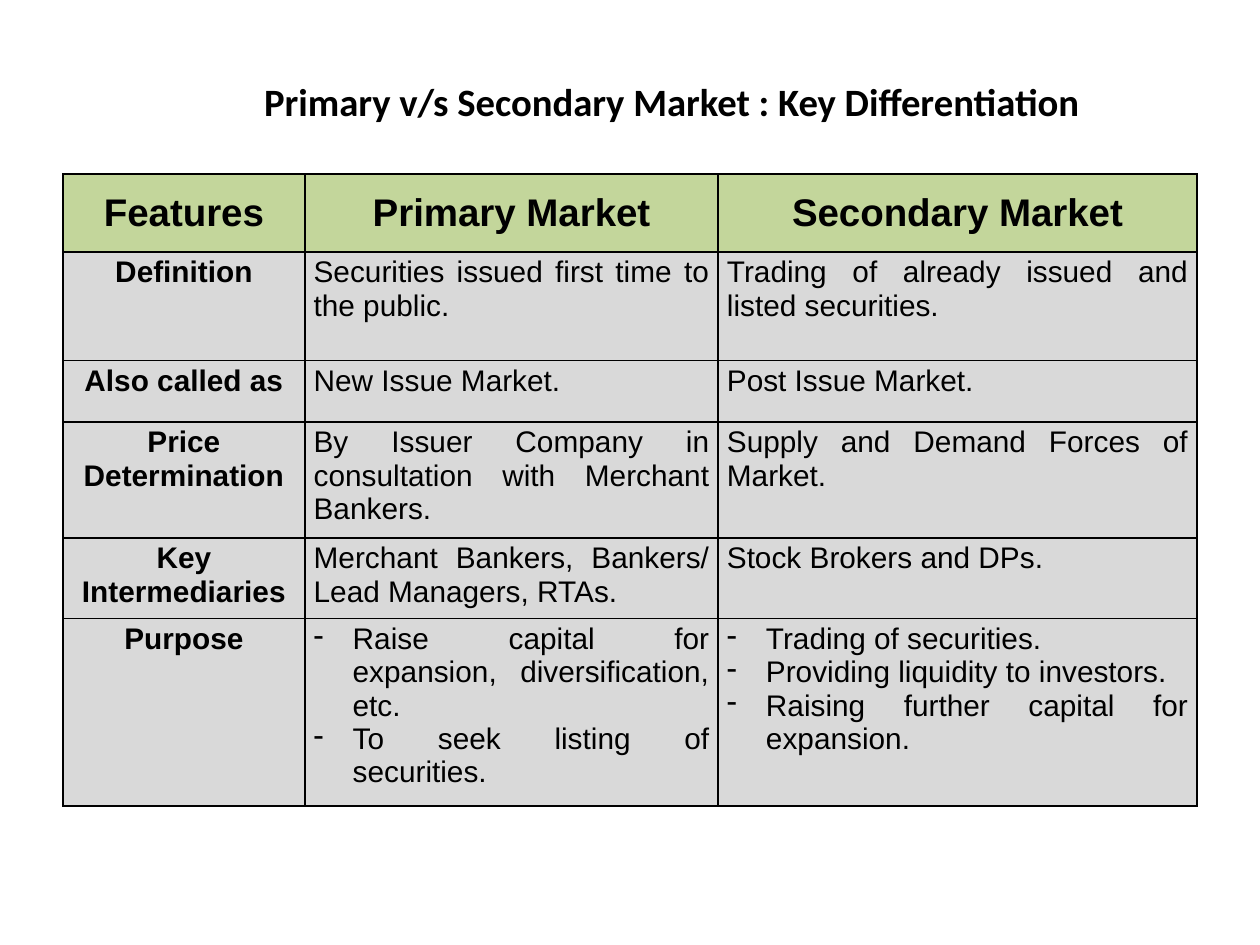
"""Build a slide that compares the primary and secondary markets in a table."""
import pptx
import pptx.dml.color
import pptx.enum.text
import pptx.oxml
import pptx.oxml.ns
import pptx.util

BLACK = pptx.dml.color.RGBColor(0x00, 0x00, 0x00)
GREEN = pptx.dml.color.RGBColor(0xC3, 0xD6, 0x9B)
GREY = pptx.dml.color.RGBColor(0xD9, 0xD9, 0xD9)
ALIGN = pptx.enum.text.PP_ALIGN
ANCHOR = pptx.enum.text.MSO_ANCHOR

HEADS = ["Features", "Primary Market", "Secondary Market"]
ROWS = [
    ("Definition", "Securities issued first time to the public.",
     "Trading of already issued and listed securities."),
    ("Also called as", "New Issue Market.", "Post Issue Market."),
    ("Price Determination",
     "By Issuer Company in consultation with Merchant Bankers.",
     "Supply and Demand Forces of Market."),
    ("Key Intermediaries", "Merchant Bankers, Bankers/ Lead Managers, RTAs.",
     "Stock Brokers and DPs."),
    ("Purpose",
     ["Raise capital for expansion, diversification, etc.",
      "To seek listing of securities."],
     ["Trading of securities.", "Providing liquidity to investors.",
      "Raising further capital for expansion."]),
]


class Deck:
    """Hold the style and the current slide, laid on a 100 by 75 grid."""

    def __init__(self):
        self.show = pptx.Presentation()
        self.show.slide_width = pptx.util.Inches(10)
        self.show.slide_height = pptx.util.Inches(7.5)
        self.slide = self.show.slides.add_slide(self.show.slide_layouts[5])

    def across(self, cols):
        """Turn grid columns into a length."""
        return round(self.show.slide_width * cols / 100)

    def down(self, rows):
        """Turn grid rows into a length."""
        return round(self.show.slide_height * rows / 75)

    def apply(self, item, form):
        """Set each format value on an item."""
        for name, value in form.items():
            setattr(item, name, value)

    def margins(self, side, top):
        """Give the inner margins as a format dict."""
        return {"margin_left": self.across(side), "margin_right": self.across(side),
                "margin_top": self.down(top), "margin_bottom": self.down(top)}

    def label(self, para, text, size, face, bold, align):
        """Put one styled run in a paragraph."""
        para.alignment = align
        run = para.add_run()
        run.text = text
        self.apply(run.font, {"size": pptx.util.Pt(size), "name": face, "bold": bold})
        run.font.color.rgb = BLACK

    def title(self, text, left, top, width, height):
        """Place and format the title."""
        shape = self.slide.shapes.title
        self.apply(shape, {"left": self.across(left), "top": self.down(top),
                           "width": self.across(width), "height": self.down(height)})
        frame = shape.text_frame
        self.apply(frame, {"word_wrap": True, "vertical_anchor": ANCHOR.BOTTOM,
                           "auto_size": pptx.enum.text.MSO_AUTO_SIZE.NONE,
                           **self.margins(0.5, 0.5)})
        para = frame.paragraphs[0]
        para.line_spacing = 0.9
        self.label(para, text, 22.1, "Calibri", True, ALIGN.CENTER)

    def bullet(self, para):
        """Give a paragraph a dash and a hanging indent."""
        props = para._p.get_or_add_pPr()
        props.set("marL", str(self.across(3.1)))
        props.set("indent", str(-self.across(3.1)))
        props.append(pptx.oxml.parse_xml(
            f'<a:buChar {pptx.oxml.ns.nsdecls("a")} char="-"/>'))

    def border(self, cell):
        """Draw a thin line on all four sides of a cell."""
        props = cell._tc.get_or_add_tcPr()
        for side in "LRTB":
            props.append(pptx.oxml.parse_xml(
                f'<a:ln{side} {pptx.oxml.ns.nsdecls("a")} w="{pptx.util.Pt(1)}">'
                f'<a:solidFill><a:srgbClr val="{BLACK}"/></a:solidFill></a:ln{side}>'))

    def cell(self, cell, text, head, first):
        """Fill one table cell with text or a dashed list."""
        self.border(cell)
        cell.fill.solid()
        cell.fill.fore_color.rgb = GREEN if head else GREY
        self.apply(cell, {"vertical_anchor": ANCHOR.MIDDLE if head else ANCHOR.TOP,
                          **self.margins(0.7, 0.3)})
        listed = isinstance(text, list)
        frame = cell.text_frame
        for i, line in enumerate(text if listed else [text]):
            para = frame.add_paragraph() if i else frame.paragraphs[0]
            self.label(para, line, 22 if head else 17, "Arial", head or first,
                       ALIGN.CENTER if head or first else ALIGN.JUSTIFY)
            if listed:
                self.bullet(para)

    def table(self, data, left, top, widths, heights):
        """Add a table with the given column widths and row heights."""
        table = self.slide.shapes.add_table(
            len(data), len(widths), self.across(left), self.down(top),
            self.across(sum(widths)), self.down(sum(heights))).table
        self.apply(table, {"first_row": False, "horz_banding": False})
        for col, width in zip(table.columns, widths):
            col.width = self.across(width)
        for row, height in zip(table.rows, heights):
            row.height = self.down(height)
        for r, texts in enumerate(data):
            for c, text in enumerate(texts):
                self.cell(table.cell(r, c), text, r == 0, c == 0)


def main():
    """Build and save the slide."""
    deck = Deck()
    deck.title("Primary v/s Secondary Market : Key Differentiation",
               2.2, 2.8, 102.2, 7.6)
    deck.table([HEADS, *ROWS], 5, 13.8, [19.2, 32.8, 38],
               [6.2, 8.6, 4.9, 9.2, 6.4, 14.9])
    deck.show.save("out.pptx")


if __name__ == "__main__":
    main()
